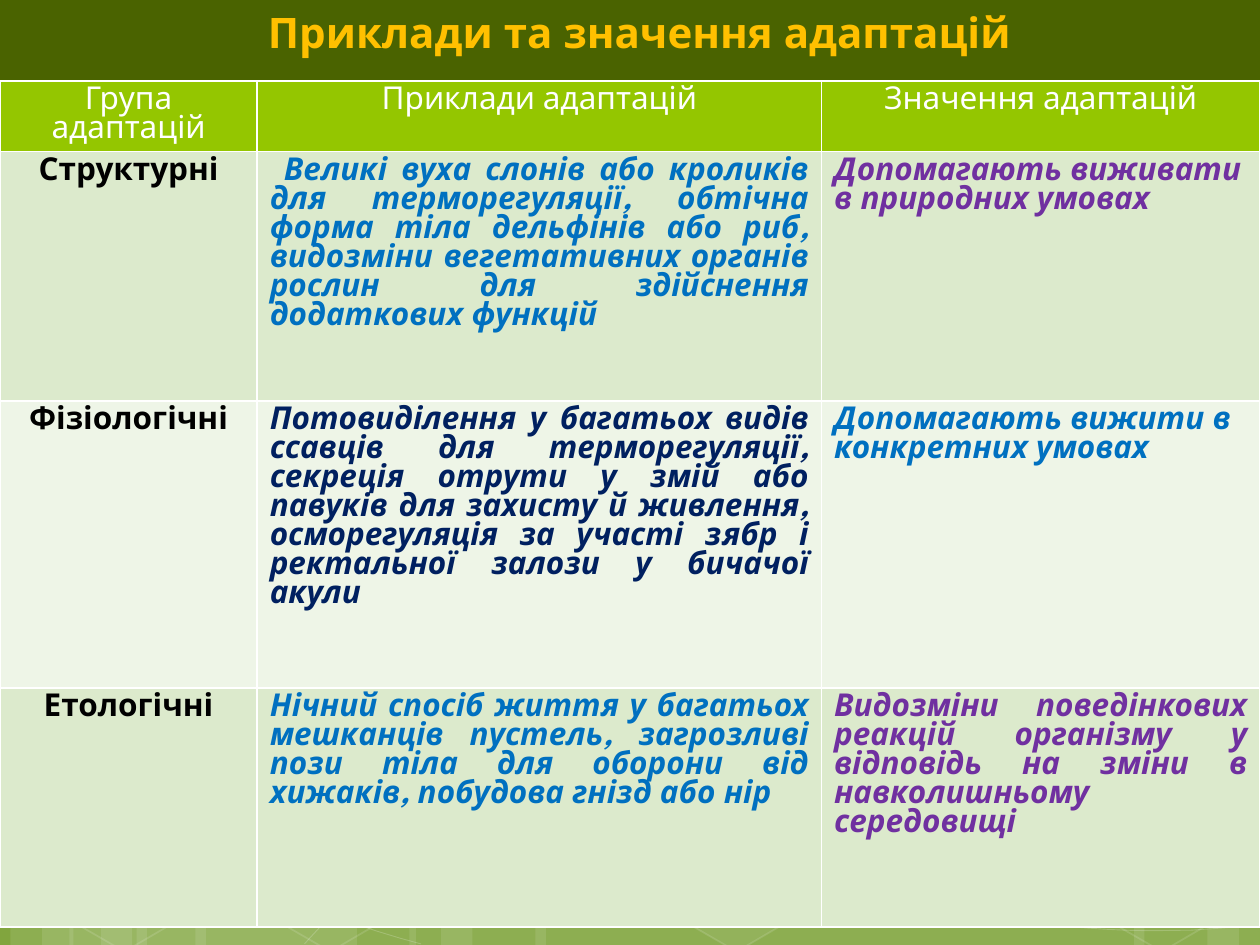
import copy

import pptx
import pptx.dml.color
import pptx.enum.shapes
import pptx.enum.text
import pptx.oxml
import pptx.oxml.ns
import pptx.util

RGB = pptx.dml.color.RGBColor
SHAPES = pptx.enum.shapes.MSO_SHAPE
ALIGN = pptx.enum.text.PP_ALIGN
WHITE = RGB(0xFF, 0xFF, 0xFF)
BLACK = RGB(0, 0, 0)
MOSS = RGB(0x4A, 0x63, 0x00)
AMBER = RGB(0xFF, 0xC0, 0x00)
LIME = RGB(0x94, 0xC6, 0x00)
PALE = RGB(0xDC, 0xEA, 0xCC)
PALEST = RGB(0xEE, 0xF5, 0xE7)
BLUE = RGB(0x00, 0x70, 0xC0)
NAVY = RGB(0x00, 0x20, 0x60)
PURPLE = RGB(0x70, 0x30, 0xA0)
SKY = [(0, RGB(0xC3, 0xF3, 0x5F)), (0.62, RGB(0x93, 0xBF, 0x3F)), (1, RGB(0x81, 0xA5, 0x3E))]

COLUMNS, ROWS = 120, 90
TABLE_TOP = 7.7
TABLE_COLUMNS = [24.5, 53.75, 41.75]
TABLE_ROWS = [6.75, 23.75, 27.35, 22.75]

STRIPE_TRIO = [(13, 21), (1, 6), (4, 10)]
STRIPES = (
    STRIPE_TRIO
    + [(left + 5.6, width) for left, width in STRIPE_TRIO]
    + [(88, 21), (115, 5), (108, 10), (51, 37), (39, 6), (42, 10)]
)
HEXAGONS = [(59.6, 6), (1.3, 0), (20.9, 0), (100.1, 0)]
CURVES = [
    [(0.7, 74), (15.2, 80.6), (29.6, 87.2), (40.1, 89.9)],
    [(75.4, 86.2), (85.3, 87.5), (96, 88), (102.4, 88.3),
     (108.6, 88.8), (110.3, 88.6), (113.4, 88.6),
     (116.5, 88.4), (118.7, 88.2), (120, 88.1)],
    [(29, 89.9), (31.2, 87.5), (33.4, 85.1), (36.2, 82.9),
     (39.1, 80.8), (43.2, 78.4), (46.6, 76.7)],
]

HEADINGS = ["Група адаптацій", "Приклади адаптацій", "Значення адаптацій"]
GROUPS = [
    ("Структурні", PALE,
     [" ", "Великі вуха слонів або кроликів для терморегуляції, обтічна форма тіла "
      "дельфінів або риб, видозміни вегетативних органів рослин для здійснення "
      "додаткових функцій"], BLUE,
     "Допомагають виживати в природних умовах", PURPLE, ALIGN.LEFT),
    ("Фізіологічні", PALEST,
     ["Потовиділення у багатьох видів ссавців для терморегуляції, секреція отрути у "
      "змій або павуків для захисту й живлення, осморегуляція за участі зябр і "
      "ректальної залози у бичачої акули"], NAVY,
     "Допомагають вижити в конкретних умовах", BLUE, ALIGN.LEFT),
    ("Етологічні", PALE,
     ["Нічний спосіб життя у багатьох мешканців пустель, загрозливі пози тіла для "
      "оборони від хижаків, побудова гнізд або нір"], BLUE,
     "Видозміни поведінкових реакцій організму у відповідь на зміни в "
     "навколишньому середовищі", PURPLE, ALIGN.JUSTIFY),
]


class SlideBuilder:
    """Draws styled elements on one slide, measured in grid columns and rows."""

    font = "League Spartan"

    def __init__(self, deck):
        self.slide = deck.slides.add_slide(deck.slide_layouts[6])
        self.column = deck.slide_width / COLUMNS
        self.row = deck.slide_height / ROWS

    def across(self, columns):
        return round(columns * self.column)

    def down(self, rows):
        return round(rows * self.row)

    def background(self, stops):
        fill = self.slide.background.fill
        fill.gradient()
        fill.gradient_angle = 270
        first = next(self.slide.element.iter(pptx.oxml.ns.qn("a:gs")))
        first.addnext(copy.deepcopy(first))
        for stop, (position, color) in zip(fill.gradient_stops, stops):
            stop.position = position
            stop.color.rgb = color

    def fade(self, fill, parent, percent):
        fill.solid()
        fill.fore_color.rgb = WHITE
        color = parent.find(pptx.oxml.ns.qn("a:solidFill"))[0]
        color.append(color.makeelement(pptx.oxml.ns.qn("a:alpha"), {"val": str(percent * 1000)}))

    def tint(self, shape, percent):
        self.fade(shape.fill, shape.element.spPr, percent)

    def outline(self, shape, points, percent):
        shape.line.width = pptx.util.Pt(points)
        self.fade(shape.line.fill, shape.line._get_or_add_ln(), percent)

    def shape(self, kind, left, top, width, height):
        shape = self.slide.shapes.add_shape(
            kind, self.across(left), self.down(top), self.across(width), self.down(height))
        shape.shadow.inherit = False
        shape.line.fill.background()
        return shape

    def stripe(self, left, width):
        self.tint(self.shape(SHAPES.RECTANGLE, left, 0, width, ROWS), 10)

    def hexagon(self, left, opacity):
        hexagon = self.shape(SHAPES.HEXAGON, left, 71, 21, 18.2)
        hexagon.adjustments[0] = 0.285
        hexagon.rotation = 30
        if opacity:
            self.tint(hexagon, opacity)
        else:
            hexagon.fill.background()
        self.outline(hexagon, 1, 12)

    def curve(self, knots, steps=16):
        points = [knots[0]]
        for start in range(0, len(knots) - 1, 3):
            bend = knots[start:start + 4]
            for step in range(1, steps + 1):
                t = step / steps
                weights = ((1 - t) ** 3, 3 * t * (1 - t) ** 2, 3 * t * t * (1 - t), t ** 3)
                points.append(tuple(sum(w * knot[axis] for w, knot in zip(weights, bend))
                                    for axis in (0, 1)))
        places = [(self.across(x), self.down(y)) for x, y in points]
        builder = self.slide.shapes.build_freeform(*places[0])
        builder.add_line_segments(places[1:], close=False)
        curve = builder.convert_to_shape()
        curve.shadow.inherit = False
        curve.fill.background()
        self.outline(curve, 0.5, 20)

    def paragraph(self, frame, runs, size, color, align, bold=True, italic=False):
        paragraph = frame.paragraphs[0]
        paragraph.alignment = align
        for text in runs:
            run = paragraph.add_run()
            run.text = text
            run.font.name = self.font
            run.font.size = pptx.util.Pt(size)
            run.font.bold = bold
            run.font.italic = italic
            run.font.color.rgb = color
        return paragraph

    def title(self, text):
        banner = self.shape(SHAPES.RECTANGLE, 0, 0, COLUMNS, 8.2)
        banner.fill.solid()
        banner.fill.fore_color.rgb = MOSS
        banner.text_frame.word_wrap = True
        banner.text_frame.vertical_anchor = pptx.enum.text.MSO_ANCHOR.TOP
        heading = self.paragraph(banner.text_frame, [text], 24, AMBER, ALIGN.CENTER)
        heading.space_before = pptx.util.Pt(4.8)
        heading._p.get_or_add_pPr().set("marL", str(self.across(1.8)))

    def table(self, top, columns, rows):
        table = self.slide.shapes.add_table(
            len(rows), len(columns), 0, self.down(top),
            self.across(sum(columns)), self.down(sum(rows))).table
        for column, width in zip(table.columns, columns):
            column.width = self.across(width)
        for row, height in zip(table.rows, rows):
            row.height = self.down(height)
        return table

    def cell(self, cell, fill, runs, color, align, **style):
        properties = cell._tc.get_or_add_tcPr()
        for side in "LRTB":
            properties.append(pptx.oxml.parse_xml(
                f'<a:ln{side} {pptx.oxml.ns.nsdecls("a")} w="12700"><a:solidFill>'
                f'<a:srgbClr val="{WHITE}"/></a:solidFill></a:ln{side}>'))
        cell.fill.solid()
        cell.fill.fore_color.rgb = fill
        self.paragraph(cell.text_frame, runs, 18, color, align, **style)


def main():
    deck = pptx.Presentation()
    deck.slide_width = pptx.util.Inches(10)
    deck.slide_height = pptx.util.Inches(7.5)
    page = SlideBuilder(deck)
    page.background(SKY)
    for left, width in STRIPES:
        page.stripe(left, width)
    for knots in CURVES:
        page.curve(knots)
    for left, opacity in HEXAGONS:
        page.hexagon(left, opacity)
    page.title("Приклади та значення адаптацій")
    adaptations = page.table(TABLE_TOP, TABLE_COLUMNS, TABLE_ROWS)
    for index, heading in enumerate(HEADINGS):
        page.cell(adaptations.cell(0, index), LIME, [heading], WHITE, ALIGN.CENTER, bold=False)
    for index, group in enumerate(GROUPS, 1):
        name, fill, examples, example_color, meaning, meaning_color, meaning_align = group
        page.cell(adaptations.cell(index, 0), fill, [name], BLACK, ALIGN.CENTER)
        page.cell(adaptations.cell(index, 1), fill, examples, example_color,
                  ALIGN.JUSTIFY, italic=True)
        page.cell(adaptations.cell(index, 2), fill, [meaning], meaning_color,
                  meaning_align, italic=True)
    deck.save("out.pptx")


if __name__ == "__main__":
    main()
